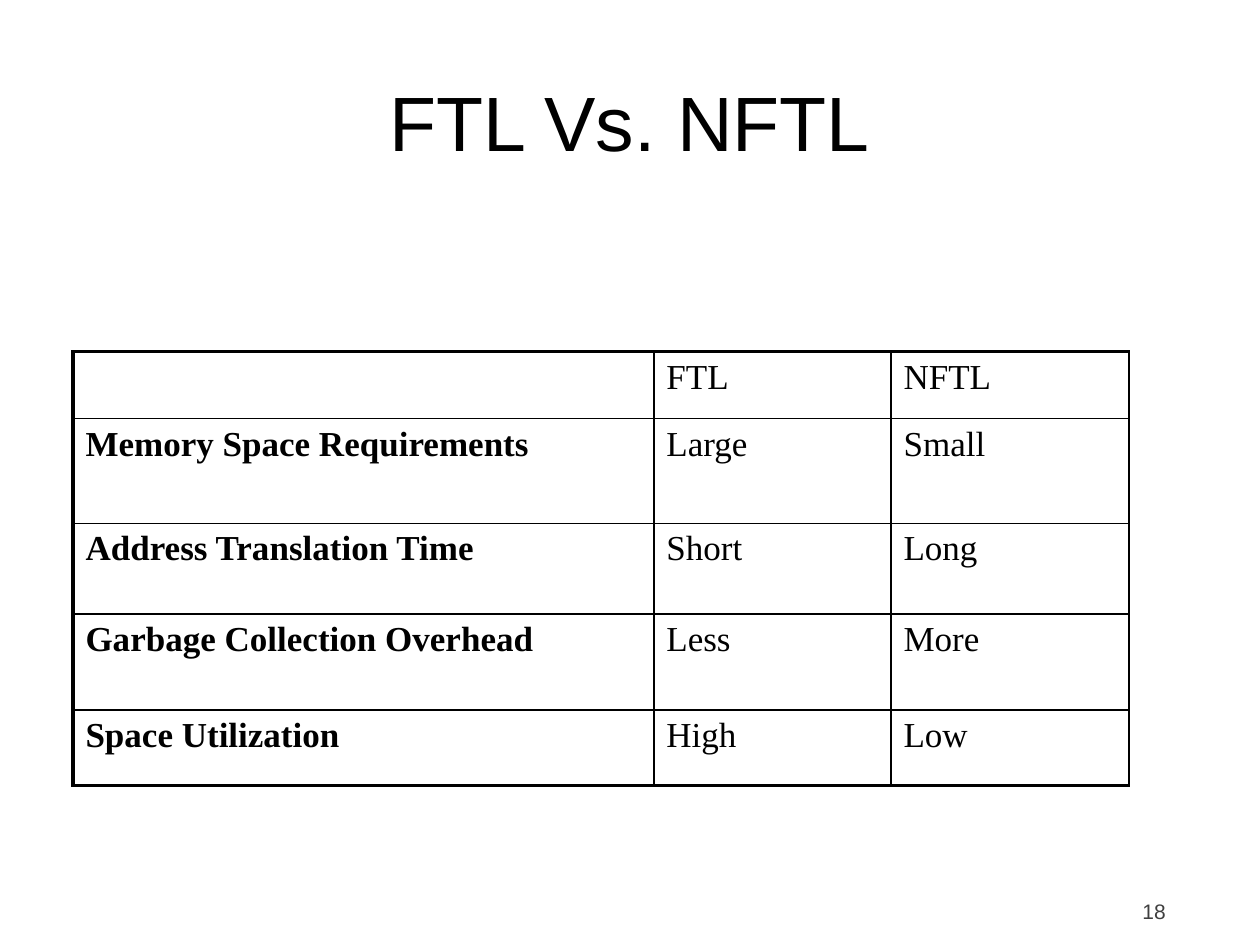
from lxml.etree import SubElement
from pptx import Presentation
from pptx.dml.color import RGBColor
from pptx.enum.text import MSO_ANCHOR, PP_ALIGN
from pptx.oxml.ns import qn
from pptx.util import Cm, Pt

COLORS = {"ink": "000000", "number": "3F3F3F"}
COLUMN_WIDTHS = [11.71, 4.78, 4.8]
ROW_HEIGHTS = [1.35, 2.11, 1.83, 1.93, 1.52]
ROWS = [
    ["", "FTL", "NFTL"],
    ["Memory Space Requirements", "Large", "Small"],
    ["Address Translation Time", "Short", "Long"],
    ["Garbage Collection Overhead", "Less", "More"],
    ["Space Utilization", "High", "Low"],
]
THIN, THICK = 1, 2.25


def format_text(text_frame, font_name, size, color, bold=False):
    """Apply one font to every run of a text frame."""
    for para in text_frame.paragraphs:
        for span in para.runs:
            span.font.name = font_name
            span.font.size = Pt(size)
            span.font.bold = bold
            span.font.color.rgb = RGBColor.from_string(COLORS[color])


def set_borders(cell, widths):
    """Draw the cell borders, given as widths in points by side."""
    properties = cell._tc.get_or_add_tcPr()
    for side in "LRTB":
        line = SubElement(properties, qn(f"a:ln{side}"), w=str(Pt(widths[side])))
        fill = SubElement(line, qn("a:solidFill"))
        SubElement(fill, qn("a:srgbClr"), val=COLORS["ink"])


def add_title(page, left, top, width, height):
    """Place and format the slide title."""
    title = page.shapes.title
    title.left, title.top = Cm(left), Cm(top)
    title.width, title.height = Cm(width), Cm(height)
    frame = title.text_frame
    frame.text = "FTL Vs. NFTL"
    frame.vertical_anchor = MSO_ANCHOR.MIDDLE
    frame.paragraphs[0].alignment = PP_ALIGN.CENTER
    format_text(frame, "Arial", 44, "ink")


def add_comparison(page, left, top):
    """Add the comparison table with a heavier outer frame."""
    table = page.shapes.add_table(
        len(ROWS), len(COLUMN_WIDTHS), Cm(left), Cm(top),
        Cm(sum(COLUMN_WIDTHS)), Cm(sum(ROW_HEIGHTS)),
    ).table
    table.first_row = table.horz_banding = False
    for column, width in zip(table.columns, COLUMN_WIDTHS):
        column.width = Cm(width)
    for row, height in zip(table.rows, ROW_HEIGHTS):
        row.height = Cm(height)
    last_row = len(ROWS) - 1
    for row_index, texts in enumerate(ROWS):
        for column_index, text in enumerate(texts):
            cell = table.cell(row_index, column_index)
            cell.text_frame.text = text
            format_text(cell.text_frame, "Times New Roman", 20, "ink",
                        bold=column_index == 0)
            set_borders(cell, {
                "L": THICK if column_index == 0 else THIN,
                "R": THIN,
                "T": THICK if row_index == 0 else THIN,
                "B": THICK if row_index == last_row else THIN,
            })
            cell.fill.background()


def add_page_number(page, left, top, width, height):
    """Add the page number at the lower right."""
    box = page.shapes.add_textbox(Cm(left), Cm(top), Cm(width), Cm(height))
    box.text_frame.word_wrap = True
    box.text_frame.text = "18"
    format_text(box.text_frame, "Arial", 12, "number")


def main():
    """Build the slide and save the deck."""
    deck = Presentation()
    deck.slide_width, deck.slide_height = Cm(25.4), Cm(19.05)
    page = deck.slides.add_slide(deck.slide_layouts[5])
    add_title(page, 1.9, 0.84, 21.6, 3.18)
    add_page_number(page, 22.78, 17.98, 2.03, 0.76)
    add_comparison(page, 1.47, 7.09)
    deck.save("out.pptx")


if __name__ == "__main__":
    main()
